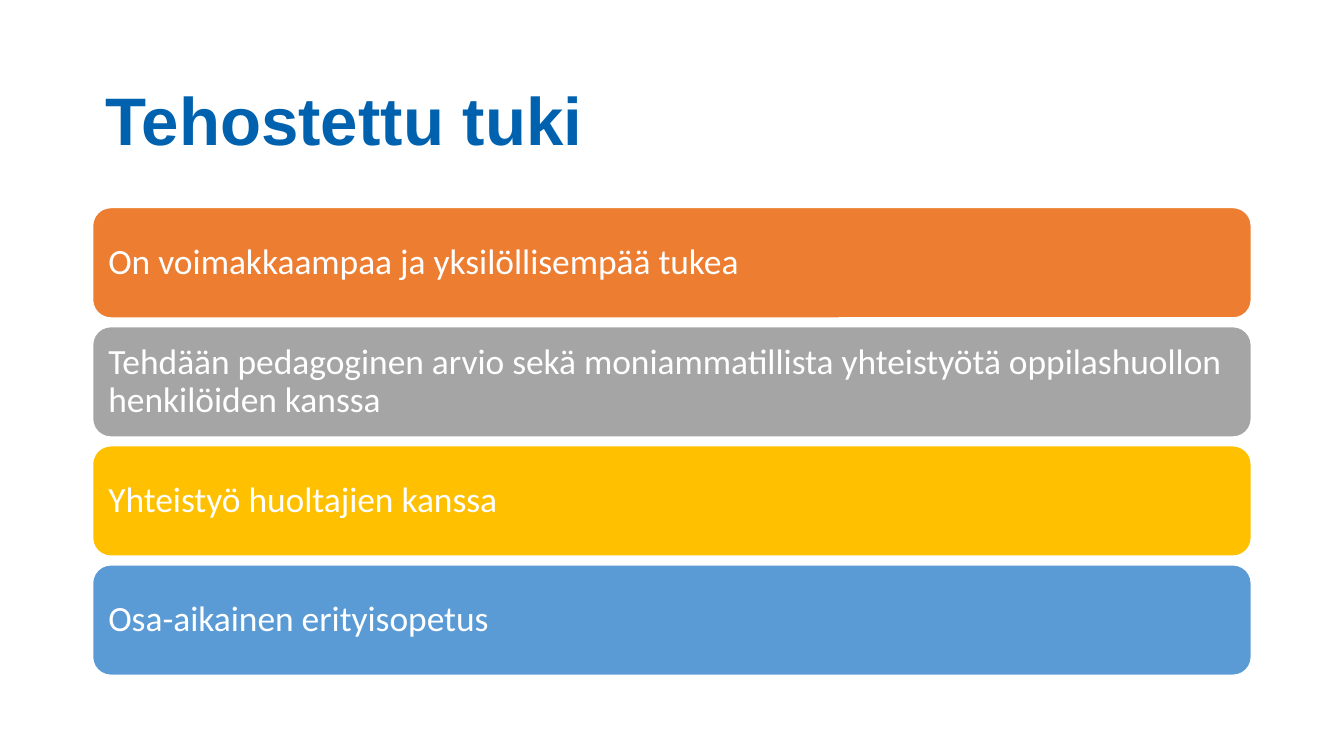
from pptx import Presentation
from pptx.dml.color import RGBColor
from pptx.enum.shapes import MSO_SHAPE
from pptx.enum.text import MSO_ANCHOR, PP_ALIGN
from pptx.util import Pt

COLORS = {
    "title": "0062AE",
    "white": "FFFFFF",
    "orange": "ED7D31",
    "gray": "A5A5A5",
    "yellow": "FFC000",
    "blue": "5B9BD5",
}
BARS = [
    ("On voimakkaampaa ja yksilöllisempää tukea", "orange"),
    ("Tehdään pedagoginen arvio sekä moniammatillista yhteistyötä "
     "oppilashuollon henkilöiden kanssa", "gray"),
    ("Yhteistyö huoltajien kanssa", "yellow"),
    ("Osa-aikainen erityisopetus", "blue"),
]
LEFT, WIDTH = 49.5, 621
BAR_TOP, BAR_HEIGHT, BAR_PITCH = 111.1, 59.4, 63.8


def format_text(text_frame, font_name, size, color, bold=False):
    text_frame.word_wrap = True
    text_frame.vertical_anchor = MSO_ANCHOR.MIDDLE
    paragraph = text_frame.paragraphs[0]
    paragraph.alignment = PP_ALIGN.LEFT
    paragraph.line_spacing = 0.9
    font = paragraph.runs[0].font
    font.name, font.size, font.bold = font_name, Pt(size), bold
    font.color.rgb = RGBColor.from_string(COLORS[color])


presentation = Presentation()
presentation.slide_width, presentation.slide_height = Pt(720), Pt(405)
slide = presentation.slides.add_slide(presentation.slide_layouts[5])

title = slide.shapes.title
title.left, title.top, title.width, title.height = Pt(LEFT), Pt(33), Pt(WIDTH), Pt(67)
title.text_frame.text = "Tehostettu tuki"
format_text(title.text_frame, "Arial", 36, "title", bold=True)

for index, (text, color) in enumerate(BARS):
    bar = slide.shapes.add_shape(
        MSO_SHAPE.ROUNDED_RECTANGLE,
        Pt(LEFT), Pt(BAR_TOP + index * BAR_PITCH), Pt(WIDTH), Pt(BAR_HEIGHT))
    bar.shadow.inherit = False
    bar.fill.solid()
    bar.fill.fore_color.rgb = RGBColor.from_string(COLORS[color])
    bar.line.color.rgb = RGBColor.from_string(COLORS["white"])
    bar.line.width = Pt(1)
    text_frame = bar.text_frame
    text_frame.margin_left = text_frame.margin_right = Pt(5.7)
    text_frame.margin_top = text_frame.margin_bottom = Pt(5.7)
    text_frame.text = text
    format_text(text_frame, "Calibri", 19, "white")

presentation.save("out.pptx")
